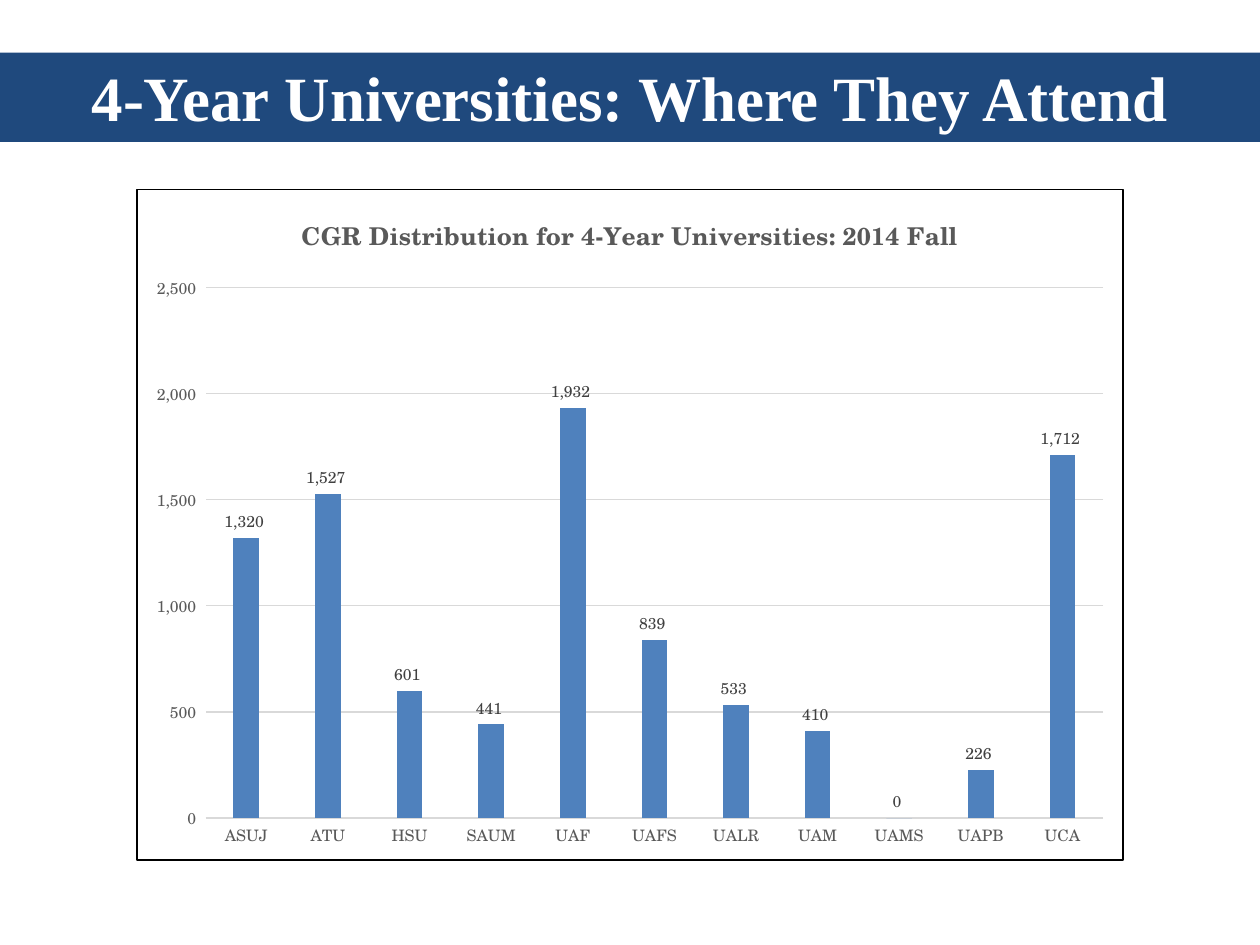
from lxml import etree
from pptx import Presentation
from pptx.chart.data import CategoryChartData
from pptx.dml.color import RGBColor
from pptx.enum.chart import XL_CHART_TYPE, XL_LABEL_POSITION, XL_TICK_MARK
from pptx.enum.shapes import MSO_SHAPE
from pptx.enum.text import MSO_ANCHOR, PP_ALIGN
from pptx.util import Cm, Pt

NAVY = RGBColor(0x1F, 0x49, 0x7D)
BLUE = RGBColor(0x4F, 0x81, 0xBD)
WHITE = RGBColor(0xFF, 0xFF, 0xFF)
BLACK = RGBColor(0x00, 0x00, 0x00)
GRAY = RGBColor(0x59, 0x59, 0x59)
DARK_GRAY = RGBColor(0x40, 0x40, 0x40)
LIGHT_GRAY = RGBColor(0xD9, 0xD9, 0xD9)
CHART_FONT = "TeX Gyre Schola"
NUMBER_FORMAT = r"#,##0_);\(#,##0\)"


def format_font(font, size, color, name=CHART_FONT, bold=False):
    font.size = Pt(size)
    font.name = name
    font.bold = bold
    font.color.rgb = color


def write_text(tf, text, align=PP_ALIGN.CENTER, **font_format):
    p = tf.paragraphs[0]
    p.alignment = align
    r = p.add_run()
    r.text = text
    format_font(r.font, **font_format)


prs = Presentation()
prs.slide_width, prs.slide_height = Cm(25.4), Cm(19.05)
s = prs.slides.add_slide(prs.slide_layouts[6])

# Title banner
sp = s.shapes.add_shape(MSO_SHAPE.RECTANGLE, 0, Cm(1.06), prs.slide_width, Cm(1.8))
sp.shadow.inherit = False
sp.fill.solid()
sp.fill.fore_color.rgb = NAVY
sp.line.fill.background()
tf = sp.text_frame
tf.word_wrap = True
tf.vertical_anchor = MSO_ANCHOR.TOP
write_text(tf, "4-Year Universities: Where They Attend",
           size=36, color=WHITE, name="Times New Roman", bold=True)

# Chart data
attendance = {
    "ASUJ": 1320, "ATU": 1527, "HSU": 601, "SAUM": 441, "UAF": 1932, "UAFS": 839,
    "UALR": 533, "UAM": 410, "UAMS": 0, "UAPB": 226, "UCA": 1712,
}
data = CategoryChartData(number_format=NUMBER_FORMAT)
data.categories = list(attendance)
data.add_series("Series 1", list(attendance.values()))

# Column chart
chart = s.shapes.add_chart(XL_CHART_TYPE.COLUMN_CLUSTERED, Cm(2.75), Cm(3.81),
                           Cm(19.9), Cm(13.54), data).chart
format_font(chart.font, 10, BLACK)
chart.has_legend = False
chart.has_title = True
write_text(chart.chart_title.text_frame,
           "CGR Distribution for 4-Year Universities: 2014 Fall",
           size=14, color=GRAY, bold=True)
chart.chart_title.include_in_layout = False

# Columns and their labels
plot = chart.plots[0]
plot.gap_width = 219
plot.overlap = -27
plot.vary_by_categories = False
columns = plot.series[0]
columns.format.fill.solid()
columns.format.fill.fore_color.rgb = BLUE
labels = columns.data_labels
labels.show_value = True
labels.position = XL_LABEL_POSITION.OUTSIDE_END
labels.number_format = NUMBER_FORMAT
labels.number_format_is_linked = False
format_font(labels.font, 9, DARK_GRAY)

# Axes and gridlines
for axis in (chart.category_axis, chart.value_axis):
    axis.major_tick_mark = axis.minor_tick_mark = XL_TICK_MARK.NONE
    format_font(axis.tick_labels.font, 9, GRAY)
value_axis = chart.value_axis
value_axis.minimum_scale, value_axis.maximum_scale = 0, 2500
value_axis.major_unit = 500
value_axis.tick_labels.number_format = NUMBER_FORMAT
value_axis.tick_labels.number_format_is_linked = False
value_axis.format.line.fill.background()
for line in (chart.category_axis.format.line, value_axis.major_gridlines.format.line):
    line.color.rgb = LIGHT_GRAY
    line.width = Pt(0.75)

# Chart area: white with a thin black border
chart_area = etree.fromstring(
    '<c:spPr xmlns:c="http://schemas.openxmlformats.org/drawingml/2006/chart"'
    ' xmlns:a="http://schemas.openxmlformats.org/drawingml/2006/main">'
    f'<a:solidFill><a:srgbClr val="{WHITE}"/></a:solidFill>'
    f'<a:ln w="{Pt(0.75)}"><a:solidFill><a:srgbClr val="{BLACK}"/></a:solidFill></a:ln>'
    '</c:spPr>')
chart.font  # text properties follow the area format in the schema
chart._chartSpace.chart.addnext(chart_area)

prs.save("out.pptx")
